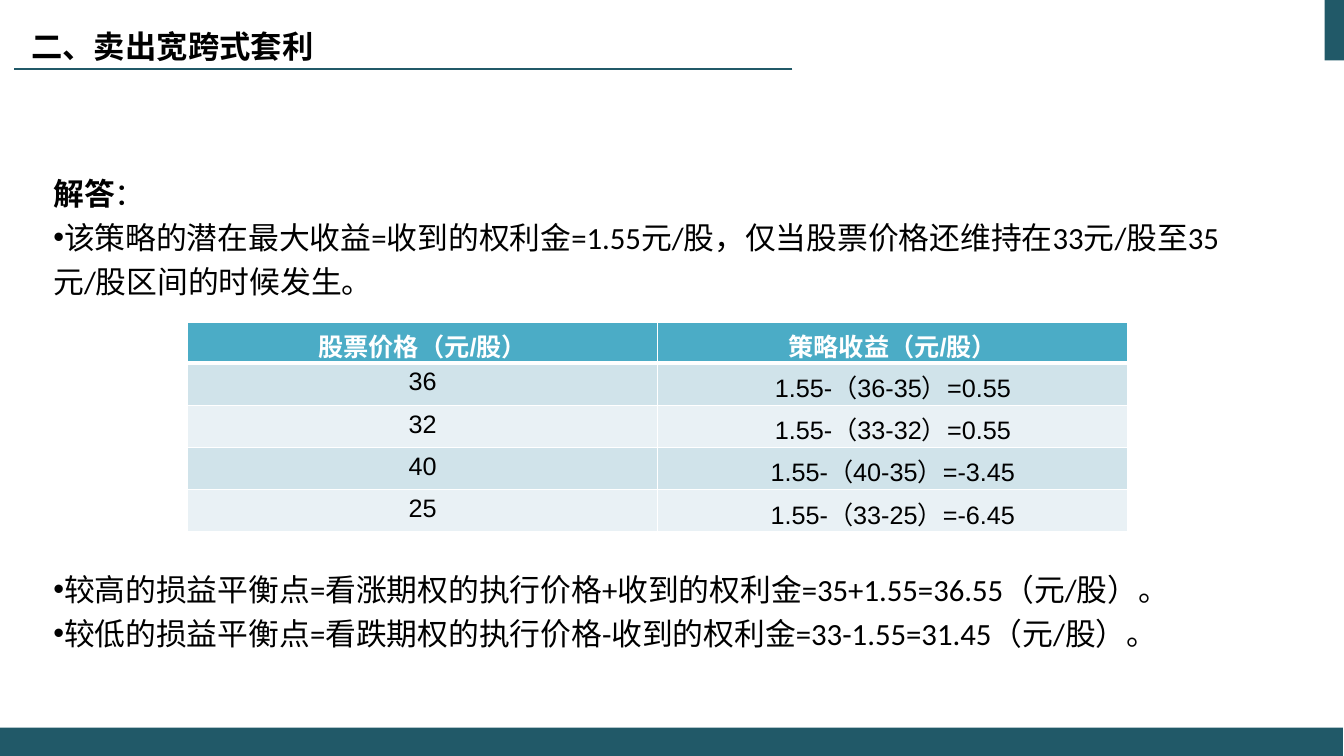
from lxml import etree
from pptx import Presentation
from pptx.dml.color import RGBColor
from pptx.enum.shapes import MSO_CONNECTOR, MSO_SHAPE
from pptx.enum.text import MSO_ANCHOR, MSO_AUTO_SIZE, PP_ALIGN
from pptx.oxml.ns import qn
from pptx.util import Pt

LEFT, CENTER = PP_ALIGN.LEFT, PP_ALIGN.CENTER
MIDDLE, TOP = MSO_ANCHOR.MIDDLE, MSO_ANCHOR.TOP
RECT, LINE = MSO_SHAPE.RECTANGLE, MSO_CONNECTOR.STRAIGHT

TEAL = RGBColor(0x21, 0x59, 0x68)
HEAD = RGBColor(0x4B, 0xAC, 0xC6)
BANDS = [RGBColor(0xD0, 0xE3, 0xEA), RGBColor(0xE9, 0xF1, 0xF5)]
WHITE = RGBColor(0xFF, 0xFF, 0xFF)
BLACK = RGBColor(0, 0, 0)

# Content
TITLE = "二、卖出宽跨式套利"
LABEL = ("解答", "：")
GAIN = ["该策略的潜在最大收益=收到的权利金=1.55元/股，仅当股票价格还维持在33元/股至35元/股区间的时候发生。"]
BREAK = [
    "较高的损益平衡点=看涨期权的执行价格+收到的权利金=35+1.55=36.55（元/股）。",
    "较低的损益平衡点=看跌期权的执行价格-收到的权利金=33-1.55=31.45（元/股）。",
]
ROWS = [
    ("股票价格（元/股）", "策略收益（元/股）"),
    ("36", "1.55-（36-35）=0.55"),
    ("32", "1.55-（33-32）=0.55"),
    ("40", "1.55-（40-35）=-3.45"),
    ("25", "1.55-（33-25）=-6.45"),
]
BARS = [(946.1, 0, 14.2, 43.2), (0, 519.8, 959.2, 20.2)]
PITCH = 31.4  # line pitch of the body text
START = 116.2  # top of the first body box


def style(font, name, size, color, bold=False):
    font.name, font.size, font.bold = name, Pt(size), bold
    font.color.rgb = color


def bullet(para):
    props = para._p.get_or_add_pPr()
    props.set("marL", "0")
    props.set("indent", "0")
    etree.SubElement(props, qn("a:buFont")).set("typeface", "Arial")
    etree.SubElement(props, qn("a:buChar")).set("char", "•")


def body(slide, line, count, items, label=None):
    """Place a text box at a line number of the body grid."""
    box = slide.shapes.add_textbox(
        Pt(31), Pt(START + line * PITCH), Pt(898.6), Pt(count * PITCH + 7.2))
    frame = box.text_frame
    frame.word_wrap = True
    frame.vertical_anchor = TOP
    texts = (["".join(label)] if label else []) + items
    frame.text = "\n".join(texts)
    for para in frame.paragraphs:
        if para.text in items:
            bullet(para)
        para.line_spacing = Pt(PITCH)
        for run in para.runs:
            style(run.font, "Calibri", 22, BLACK)
    if label:
        first = frame.paragraphs[0]
        first.runs[0].text = label[0]
        first.runs[0].font.bold = True
        tail = first.add_run()
        tail.text = label[1]
        style(tail.font, "Calibri", 22, BLACK)


def border(cell, side, width):
    line = etree.Element(qn("a:ln" + side), w=str(Pt(width)))
    fill = etree.SubElement(line, qn("a:solidFill"))
    etree.SubElement(fill, qn("a:srgbClr")).set("val", str(WHITE))
    return line


def main():
    deck = Presentation()
    deck.slide_width, deck.slide_height = Pt(960), Pt(540)
    slide = deck.slides.add_slide(deck.slide_layouts[5])

    # Frame: corner mark, footer bar and title rule
    for spot in BARS:
        bar = slide.shapes.add_shape(RECT, *map(Pt, spot))
        bar.shadow.inherit = False
        bar.fill.solid()
        bar.fill.fore_color.rgb = TEAL
        bar.line.fill.background()
    rule = slide.shapes.add_connector(LINE, Pt(566), Pt(49), Pt(10), Pt(49))
    rule.line.color.rgb = TEAL
    rule.line.width = Pt(1.5)
    etree.SubElement(rule._element.spPr, qn("a:effectLst"))

    # Title in small capitals
    title = slide.shapes.title
    title.left, title.top = Pt(15.1), Pt(-2.9)
    title.width, title.height = Pt(783.4), Pt(67)
    frame = title.text_frame
    frame.text = TITLE
    frame.auto_size = MSO_AUTO_SIZE.NONE
    frame.vertical_anchor = MIDDLE
    para = frame.paragraphs[0]
    para.alignment = LEFT
    font = para.runs[0].font
    style(font, "Noto Sans CJK SC", 28, BLACK, True)
    para.runs[0]._r.get_or_add_rPr().set("cap", "small")

    # Body text above and below the table
    body(slide, 0, 3, GAIN, LABEL)
    body(slide, 9, 2, BREAK)

    # Payoff table
    table = slide.shapes.add_table(
        len(ROWS), 2, Pt(133.9), Pt(230.4), Pt(671.8), Pt(149.8)).table
    for r, row in enumerate(ROWS):
        table.rows[r].height = Pt(30.2 if r else 28.8)
        for c, text in enumerate(row):
            cell = table.cell(r, c)
            cell.text = text
            cell.fill.solid()
            cell.fill.fore_color.rgb = BANDS[(r - 1) % 2] if r else HEAD
            para = cell.text_frame.paragraphs[0]
            para.alignment = CENTER
            style(para.runs[0].font, "Arial", 18, BLACK if r else WHITE, not r)
            widths = {"L": 1, "R": 1, "T": 3 if r == 1 else 1, "B": 1 if r else 3}
            props = cell._tc.get_or_add_tcPr()
            for i, (side, width) in enumerate(widths.items()):
                props.insert(i, border(cell, side, width))

    deck.save("out.pptx")


if __name__ == "__main__":
    main()
